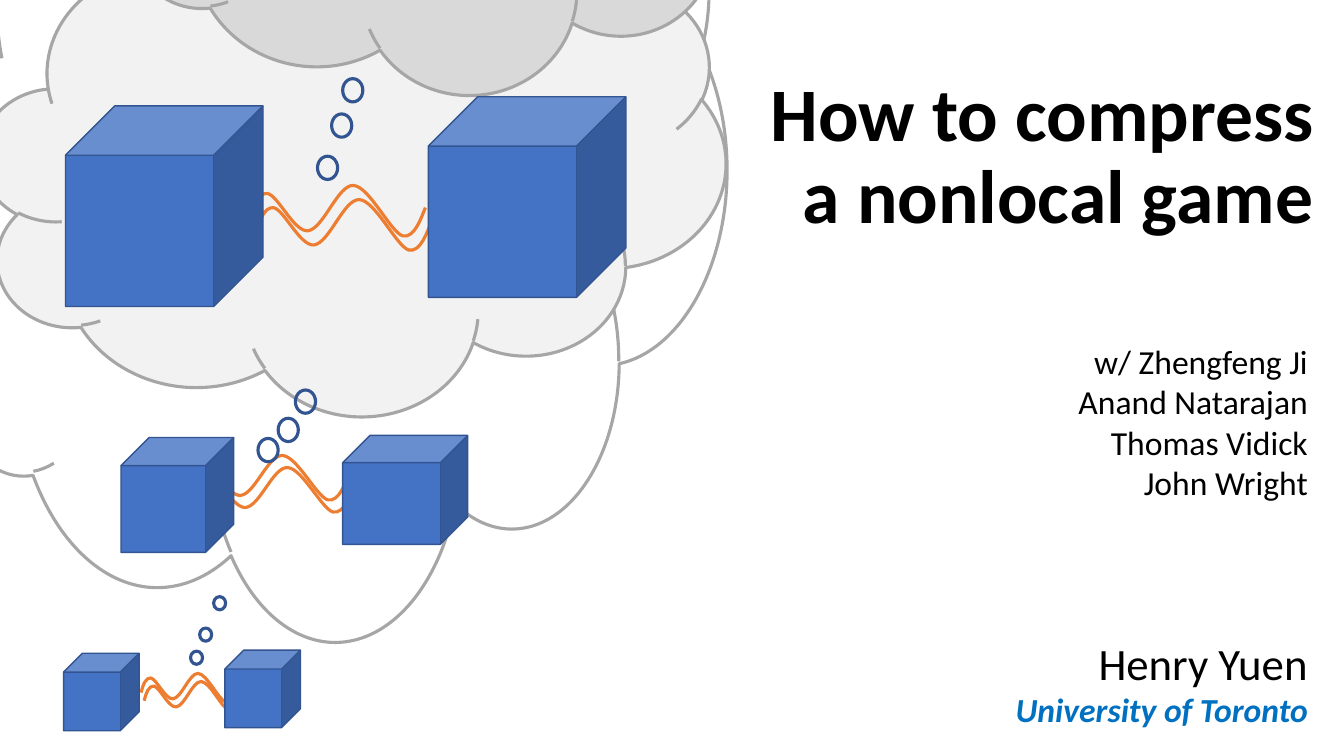
from lxml import etree
from pptx import Presentation
from pptx.dml.color import RGBColor
from pptx.enum import shapes, text
from pptx.oxml import ns
from pptx.util import Pt

FONT = "Calibri"
BLUE, NAVY, ORANGE, GREY = "4472C4", "325491", "ED7D31", "A6A6A6"
KIND = shapes.MSO_SHAPE

# Cubic curves of one wave, as fractions of its width and height.
WAVE_START = (0, 0.68)
WAVE_CURVES = [
    ((0.02, 0.4), (0.05, 0.14), (0.1, 0.16)),
    ((0.16, 0.2), (0.25, 0.92), (0.33, 0.9)),
    ((0.42, 0.86), (0.5, -0.02), (0.59, 0)),
    ((0.68, 0.02), (0.8, 0.92), (0.87, 1)),
    ((0.94, 1.06), (0.98, 0.6), (1, 0.44)),
]

# Left, top, width, height and fill, from back to front.
CLOUDS = [
    (-53.3, -197.3, 572.4, 653.8, None),
    (-13.7, -54, 532.1, 350.6, "F2F2F2"),
    (84.2, -275, 491, 342, "D9D9D9"),
]

# Wave and bubble places are measured from the top left corner of the box.
GAMES = [
    dict(box=(86.4, 311, 247.7, 83.6), cubes=[(80.6, 82.1), (89.3, 77.8)],
         wave=(47.5, 14.4, 115.2, 31.7), shift=(3.6, 8.6), bubble=(14.4, 16.6),
         bubbles=[(97.9, 2.2), (112.3, -12.2), (124.6, -32.4)]),
    dict(box=(46.8, 69.1, 400.3, 149.8), cubes=[(141.1, 143.3)] * 2,
         wave=(131.8, 63.4, 125.3, 36), shift=(4.3, 10.1), bubble=(14.4, 16.6),
         bubbles=[(180, 42.5), (190.1, 12.3), (198, -12.9)]),
    dict(box=(45.4, 464.4, 169.2, 57.6), cubes=[(54, 55.4)] * 2,
         wave=(55.4, 16.6, 69.1, 20.2), shift=(2.2, 5.8), bubble=(8.6, 9.4),
         bubbles=[(107.2, -38.2), (97.2, -15.8), (90.7, 0.7)]),
]


def color(code):
    return RGBColor.from_string(code)


def style(shape, fill, line, weight):
    shape.shadow.inherit = False
    if fill:
        shape.fill.solid()
        shape.fill.fore_color.rgb = color(fill)
    else:
        shape.fill.background()
    shape.line.color.rgb = color(line)
    shape.line.width = Pt(weight)


def add_preset(page, kind, box, fill, line, weight=2.25):
    shape = page.shapes.add_shape(kind, *(Pt(length) for length in box))
    style(shape, fill, line, weight)


def add_wave(group, box):
    """One strand: straight segments between the knots, then bent into curves."""
    left, top, width, height = box

    def place(point):
        return Pt(left + point[0] * width), Pt(top + point[1] * height)

    builder = group.shapes.build_freeform(*place(WAVE_START))
    builder.add_line_segments([place(curve[-1]) for curve in WAVE_CURVES], close=False)
    strand = builder.convert_to_shape()
    style(strand, None, ORANGE, 2.25)
    segments = list(strand.element.iter(ns.qn("a:lnTo")))
    for segment, curve in zip(segments, WAVE_CURVES):
        bend = etree.Element(ns.qn("a:cubicBezTo"))
        for point in curve:
            x, y = place(point)
            etree.SubElement(bend, ns.qn("a:pt"),
                             x=str(x - strand.left), y=str(y - strand.top))
        segment.getparent().replace(segment, bend)


def add_game(page, box, cubes, wave, shift, bubble, bubbles):
    """Two cubes joined by a double wave, with thought bubbles above."""
    left, top, width, height = box
    wave_left, wave_top, *wave_size = wave
    group = page.shapes.add_group_shape()
    for strand in range(2):
        add_wave(group, (left + wave_left + strand * shift[0],
                         top + wave_top + strand * shift[1], *wave_size))
    first, second = cubes
    add_preset(page, KIND.CUBE, (left, top + height - first[1], *first), BLUE, NAVY, 1)
    add_preset(page, KIND.CUBE, (left + width - second[0], top, *second), BLUE, NAVY, 1)
    for x, y in bubbles:
        add_preset(page, KIND.OVAL, (left + x, top + y, *bubble), None, NAVY)


def add_text(page, box, paragraphs, anchor=text.MSO_ANCHOR.TOP, spacing=1.0):
    """Right-aligned text; each paragraph is (lines, size, colour, bold, italic)."""
    frame = page.shapes.add_textbox(*(Pt(length) for length in box)).text_frame
    frame.word_wrap = True
    frame.vertical_anchor = anchor
    for index, (lines, size, code, bold, italic) in enumerate(paragraphs):
        para = frame.add_paragraph() if index else frame.paragraphs[0]
        para.alignment = text.PP_ALIGN.RIGHT
        para.line_spacing = spacing
        for number, line in enumerate(lines):
            if number:
                para.add_line_break()
            span = para.add_run()
            span.text = line
            span.font.name = FONT
            span.font.size = Pt(size)
            span.font.color.rgb = color(code)
            span.font.bold = bold
            span.font.italic = italic


def add_title_slide(deck):
    page = deck.slides.add_slide(deck.slide_layouts[6])
    for *box, fill in CLOUDS:
        add_preset(page, KIND.CLOUD, box, fill, GREY)
    for game in GAMES:
        add_game(page, **game)
    add_text(page, (441.5, 22, 504, 152.6),
             [(["How to compress", "a nonlocal game"], 54, "000000", True, False)],
             text.MSO_ANCHOR.BOTTOM, 0.9)
    authors = [["w/ Zhengfeng Ji"], ["Anand Natarajan", "Thomas Vidick"], ["John Wright"]]
    add_text(page, (396.3, 240, 545, 123.8),
             [(lines, 24, "000000", False, False) for lines in authors])
    add_text(page, (396.3, 450.4, 545, 74.9),
             [(["Henry Yuen"], 32, "000000", False, False),
              (["University of Toronto"], 24, "0070C0", True, True)])


def main():
    deck = Presentation()
    deck.slide_width, deck.slide_height = Pt(960), Pt(540)
    add_title_slide(deck)
    deck.save("out.pptx")


if __name__ == "__main__":
    main()
